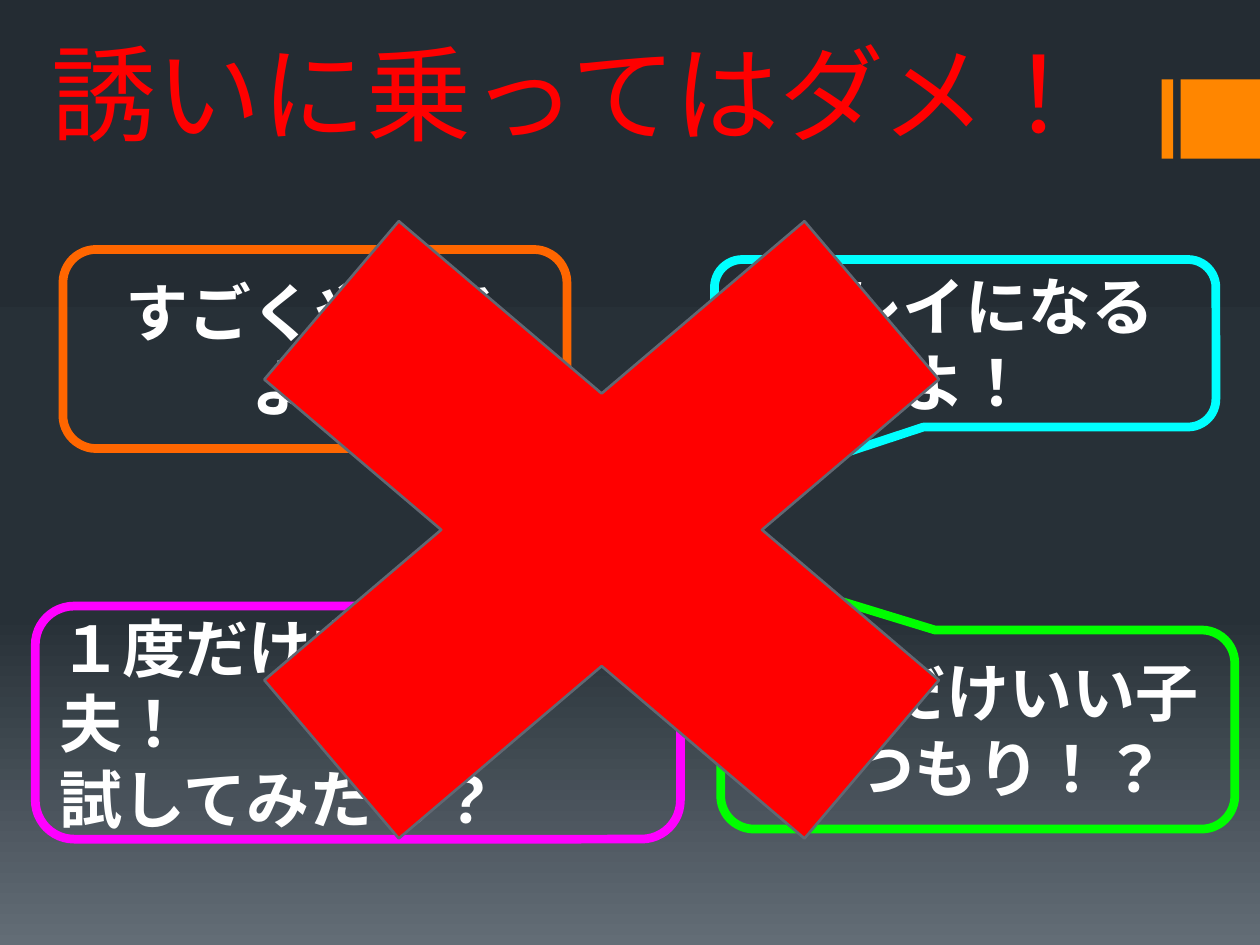
from copy import deepcopy
from dataclasses import dataclass

from pptx import Presentation
from pptx.dml.color import RGBColor
from pptx.enum.lang import MSO_LANGUAGE_ID
from pptx.enum.shapes import MSO_SHAPE
from pptx.enum.text import MSO_ANCHOR, MSO_AUTO_SIZE, PP_ALIGN
from pptx.oxml.ns import qn
from pptx.shapes.autoshape import Shape
from pptx.slide import Slide
from pptx.text.text import TextFrame
from pptx.util import Inches, Pt

RECTANGLE = MSO_SHAPE.RECTANGLE
CALLOUT = MSO_SHAPE.ROUNDED_RECTANGULAR_CALLOUT
CROSS = MSO_SHAPE.MATH_MULTIPLY
LEFT, CENTER = PP_ALIGN.LEFT, PP_ALIGN.CENTER
MIDDLE, BOTTOM = MSO_ANCHOR.MIDDLE, MSO_ANCHOR.BOTTOM
FIXED_SIZE = MSO_AUTO_SIZE.NONE
JAPANESE = MSO_LANGUAGE_ID.JAPANESE

SLIDE_WIDTH, SLIDE_HEIGHT = Inches(10), Inches(7.5)
COLUMNS, ROWS = 100, 75
TITLE_ONLY_LAYOUT = 5


@dataclass(frozen=True)
class Theme:
    font: str = "Arial"
    title_size: int = 60
    callout_size: int = 36
    callout_line: float = 5
    cross_line: float = 1.5
    warning: str = "FF0000"
    cross_edge: str = "616873"
    accent: str = "FF8600"
    callout_text: str = "FFFFFF"
    background: tuple[tuple[float, str], ...] = (
        (0, "242C33"), (0.65, "273037"), (1, "636D76"))


@dataclass(frozen=True)
class Box:
    """A place on the slide, in grid columns and rows."""
    column: float
    row: float
    width: float
    height: float

    def lengths(self) -> tuple[int, int, int, int]:
        column_width, row_height = SLIDE_WIDTH / COLUMNS, SLIDE_HEIGHT / ROWS
        return (round(self.column * column_width), round(self.row * row_height),
                round(self.width * column_width), round(self.height * row_height))


@dataclass(frozen=True)
class Callout:
    lines: tuple[str, ...]
    box: Box
    color: str
    tail: tuple[float, float]
    alignment: PP_ALIGN = CENTER


THEME = Theme()
TITLE = "誘いに乗ってはダメ！"
TITLE_BOX = Box(3.1, 1.3, 85.9, 11.5)
ACCENT_BARS = (Box(92.2, 6.3, 0.9, 6.3), Box(93.7, 6.3, 6.3, 6.3))
CROSS_BOX = Box(6.5, 7, 82.5, 70.1)
CALLOUTS = (
    Callout(("自分だけいい子のつもり！？",), Box(57.2, 50, 40.8, 15.8),
            "00FF00", (-0.45, -0.79)),
    Callout(("すごくやせるよ！",), Box(5, 19.8, 40, 15.8),
            "FF6600", (0.43, 0.81)),
    Callout(("１度だけなら大丈夫！", "試してみたら？"), Box(2.8, 48.1, 51.2, 18.5),
            "FF00FF", (0.33, -0.84), LEFT),
    Callout(("キレイになるよ！",), Box(56.7, 20.6, 39.8, 13.3),
            "00FFFF", (-0.59, 1)),
)


def paint_background(slide: Slide) -> None:
    fill = slide.background.fill
    fill.gradient()
    fill.gradient_angle = 270
    stop_list = slide.element.find(f".//{qn('a:gsLst')}")
    stop_list.insert(1, deepcopy(stop_list[0]))
    for stop, (position, color) in zip(fill.gradient_stops, THEME.background):
        stop.position = position
        stop.color.rgb = RGBColor.from_string(color)


def add_shape(slide: Slide, kind: MSO_SHAPE, box: Box, fill: str | None = None,
              line: str | None = None, line_width: float = 0) -> Shape:
    shape = slide.shapes.add_shape(kind, *box.lengths())
    shape.shadow.inherit = False
    if fill:
        shape.fill.solid()
        shape.fill.fore_color.rgb = RGBColor.from_string(fill)
    else:
        shape.fill.background()
    if line:
        shape.line.color.rgb = RGBColor.from_string(line)
        shape.line.width = Pt(line_width)
    else:
        shape.line.fill.background()
    return shape


def write_text(frame: TextFrame, lines: tuple[str, ...], size: int, color: str,
               bold: bool, alignment: PP_ALIGN, anchor: MSO_ANCHOR) -> None:
    """Write Japanese lines whose closing marks stay inside the margins."""
    frame.word_wrap = True
    frame.auto_size = FIXED_SIZE
    frame.vertical_anchor = anchor
    frame.text = "\n".join(lines)
    for paragraph in frame.paragraphs:
        paragraph.alignment = alignment
        paragraph._p.get_or_add_pPr().set("hangingPunct", "0")
        paragraph.font.name = THEME.font
        paragraph.font.size = Pt(size)
        paragraph.font.bold = bold
        paragraph.font.color.rgb = RGBColor.from_string(color)
        for run in paragraph.runs:
            run.font.language_id = JAPANESE


def add_callout(slide: Slide, callout: Callout) -> None:
    shape = add_shape(slide, CALLOUT, callout.box,
                      line=callout.color, line_width=THEME.callout_line)
    shape.adjustments[0], shape.adjustments[1] = callout.tail
    write_text(shape.text_frame, callout.lines, THEME.callout_size,
               THEME.callout_text, True, callout.alignment, MIDDLE)


def place_title(slide: Slide) -> None:
    title = slide.shapes.title
    title.left, title.top, title.width, title.height = TITLE_BOX.lengths()
    write_text(title.text_frame, (TITLE,), THEME.title_size, THEME.warning,
               False, LEFT, BOTTOM)


def main() -> None:
    presentation = Presentation()
    presentation.slide_width, presentation.slide_height = SLIDE_WIDTH, SLIDE_HEIGHT
    slide = presentation.slides.add_slide(
        presentation.slide_layouts[TITLE_ONLY_LAYOUT])
    paint_background(slide)
    place_title(slide)
    for bar in ACCENT_BARS:
        add_shape(slide, RECTANGLE, bar, fill=THEME.accent)
    for callout in CALLOUTS:
        add_callout(slide, callout)
    add_shape(slide, CROSS, CROSS_BOX, THEME.warning, THEME.cross_edge,
              THEME.cross_line)
    presentation.save("out.pptx")


if __name__ == "__main__":
    main()
